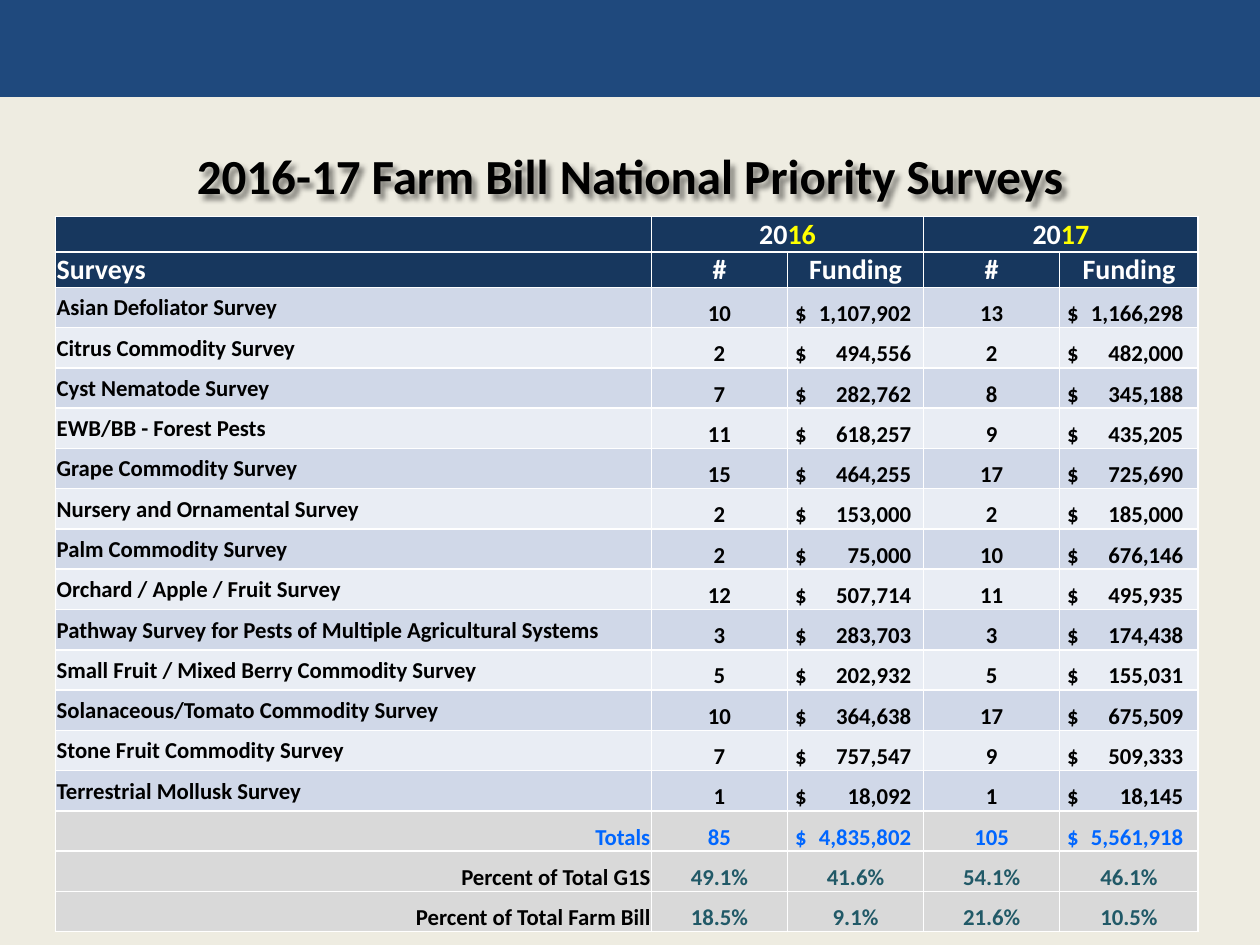
from typing import NamedTuple

from lxml.etree import SubElement
from pptx import Presentation
from pptx.dml.color import RGBColor
from pptx.enum.shapes import MSO_SHAPE
from pptx.enum.text import MSO_ANCHOR, PP_ALIGN
from pptx.oxml import parse_xml
from pptx.oxml.ns import nsdecls, qn
from pptx.util import Inches, Pt

W, H = 10, 7.5
FONT = "Calibri"
NAVY, BLACK, WHITE, YELLOW = "17375E", "000000", "FFFFFF", "FFFF00"
BANDS = ("D0D8E8", "E9EDF4")
GREY, BLUE, TEAL = "D9D9D9", "0066FF", "215967"
COLS = (4.73, 1.08, 1.08, 1.08, 1.1)
HEAD_H, ROW_H = 0.28, 0.32
LEFT, CENTER, RIGHT = PP_ALIGN.LEFT, PP_ALIGN.CENTER, PP_ALIGN.RIGHT
MIDDLE, BOTTOM = MSO_ANCHOR.MIDDLE, MSO_ANCHOR.BOTTOM


class Survey(NamedTuple):
    name: str
    count_2016: int
    funding_2016: int
    count_2017: int
    funding_2017: int


class Share(NamedTuple):
    name: str
    values: tuple[str, ...]


SURVEYS = [
    Survey("Asian Defoliator Survey", 10, 1107902, 13, 1166298),
    Survey("Citrus Commodity Survey", 2, 494556, 2, 482000),
    Survey("Cyst Nematode Survey", 7, 282762, 8, 345188),
    Survey("EWB/BB - Forest Pests", 11, 618257, 9, 435205),
    Survey("Grape Commodity Survey", 15, 464255, 17, 725690),
    Survey("Nursery and Ornamental Survey", 2, 153000, 2, 185000),
    Survey("Palm Commodity Survey", 2, 75000, 10, 676146),
    Survey("Orchard / Apple / Fruit Survey", 12, 507714, 11, 495935),
    Survey("Pathway Survey for Pests of Multiple Agricultural Systems", 3, 283703, 3, 174438),
    Survey("Small Fruit / Mixed Berry Commodity Survey", 5, 202932, 5, 155031),
    Survey("Solanaceous/Tomato Commodity Survey", 10, 364638, 17, 675509),
    Survey("Stone Fruit Commodity Survey", 7, 757547, 9, 509333),
    Survey("Terrestrial Mollusk Survey", 1, 18092, 1, 18145),
]
TOTALS = Survey("Totals", 85, 4835802, 105, 5561918)
SHARES = [
    Share("Percent of Total G1S", ("49.1%", "41.6%", "54.1%", "46.1%")),
    Share("Percent of Total Farm Bill", ("18.5%", "9.1%", "21.6%", "10.5%")),
]


def rgb(color: str) -> RGBColor:
    return RGBColor.from_string(color)


def style_run(r, size: float, color: str) -> None:
    r.font.name, r.font.size, r.font.bold = FONT, Pt(size), True
    r.font.color.rgb = rgb(color)


def paint_cell(cell, fill: str) -> None:
    """White borders, flat fill, tight margins."""
    cell.fill.solid()
    cell.fill.fore_color.rgb = rgb(fill)
    cell.margin_left = cell.margin_right = cell.margin_top = Inches(0.01)
    cell.margin_bottom = 0
    for i, side in enumerate(("lnL", "lnR", "lnT", "lnB")):
        cell._tc.tcPr.insert(i, parse_xml(
            f'<a:{side} {nsdecls("a")} w="12700"><a:solidFill>'
            f'<a:srgbClr val="{WHITE}"/></a:solidFill></a:{side}>'))
    # Small empty-line size keeps header rows at their height
    SubElement(cell.text_frame.paragraphs[0]._p, qn("a:endParaRPr"), sz="1300")


def write_cell(cell, text: str, align, anchor, color: str, size: float = 13) -> None:
    cell.vertical_anchor = anchor
    p = cell.text_frame.paragraphs[0]
    p.alignment = align
    r = p.add_run()
    r.text = text
    style_run(r, size, color)


def write_money(cell, amount: int, color: str) -> None:
    """Dollar sign at the left, figure against a right tab."""
    cell.margin_left = Inches(0.06)
    pPr = cell.text_frame.paragraphs[0]._p.get_or_add_pPr()
    tabs = SubElement(pPr, qn("a:tabLst"))
    SubElement(tabs, qn("a:tab"), pos=str(Inches(0.92)), algn="r")
    write_cell(cell, f"$\t{amount:,}", LEFT, BOTTOM, color)


def write_survey(cells, row: Survey, align, anchor, color: str) -> None:
    write_cell(cells[0], row.name, align, anchor, color)
    for c in (1, 3):
        write_cell(cells[c], str(row[c]), CENTER, BOTTOM, color)
        write_money(cells[c + 1], row[c + 1], color)


def add_banner(s) -> None:
    sp = s.shapes.add_shape(MSO_SHAPE.RECTANGLE, 0, 0, Inches(W), Inches(0.77))
    sp.shadow.inherit = False
    sp.fill.solid()
    sp.fill.fore_color.rgb = rgb("1F497D")
    sp.line.fill.background()


def add_title(s, text: str) -> None:
    sp = s.shapes.add_textbox(Inches(0.05 * W), Inches(1), Inches(0.9 * W), Inches(0.78))
    tf = sp.text_frame
    tf.word_wrap = True
    tf.vertical_anchor = MIDDLE
    p = tf.paragraphs[0]
    p.text = text
    p.alignment = CENTER
    style_run(p.runs[0], 28, BLACK)
    # Soft shadow behind the letters
    sp._element.spPr.append(parse_xml(
        f'<a:effectLst {nsdecls("a")}><a:outerShdw blurRad="38100" dist="38100" '
        f'dir="2700000" algn="tl"><a:srgbClr val="{BLACK}"><a:alpha val="43000"/>'
        '</a:srgbClr></a:outerShdw></a:effectLst>'))


def add_survey_table(s) -> None:
    heights = [HEAD_H] * 2 + [ROW_H] * (len(SURVEYS) + 1 + len(SHARES))
    table = s.shapes.add_table(len(heights), len(COLS), Inches(0.44), Inches(1.72),
                               Inches(sum(COLS)), Inches(sum(heights))).table
    table.first_row = table.horz_banding = False
    for col, width in zip(table.columns, COLS):
        col.width = Inches(width)
    for row, height in zip(table.rows, heights):
        row.height = Inches(height)

    fills = [NAVY] * 2 + [BANDS[i % 2] for i in range(len(SURVEYS))] + [GREY] * 3
    grid = [list(row.cells) for row in table.rows]
    for cells, fill in zip(grid, fills):
        for cell in cells:
            paint_cell(cell, fill)

    # Header rows
    for c, year in ((1, "16"), (3, "17")):
        grid[0][c].merge(grid[0][c + 1])
        write_cell(grid[0][c], "20", CENTER, MIDDLE, WHITE, 16)
        write_cell(grid[0][c], year, CENTER, MIDDLE, YELLOW, 16)
    for c, label in enumerate(("Surveys", "#", "Funding", "#", "Funding")):
        write_cell(grid[1][c], label, CENTER if c else LEFT, MIDDLE, WHITE, 16)

    # Surveys, totals and shares
    for cells, survey in zip(grid[2:], SURVEYS):
        write_survey(cells, survey, LEFT, MIDDLE, BLACK)
    write_survey(grid[-3], TOTALS, RIGHT, BOTTOM, BLUE)
    for cells, share in zip(grid[-2:], SHARES):
        write_cell(cells[0], share.name, RIGHT, BOTTOM, BLACK)
        for cell, value in zip(cells[1:], share.values):
            write_cell(cell, value, CENTER, BOTTOM, TEAL)


def main() -> None:
    prs = Presentation()
    prs.slide_width, prs.slide_height = Inches(W), Inches(H)
    s = prs.slides.add_slide(prs.slide_layouts[6])
    s.background.fill.solid()
    s.background.fill.fore_color.rgb = rgb("EEECE1")
    add_banner(s)
    add_title(s, "2016-17 Farm Bill National Priority Surveys")
    add_survey_table(s)
    prs.save("out.pptx")


if __name__ == "__main__":
    main()
